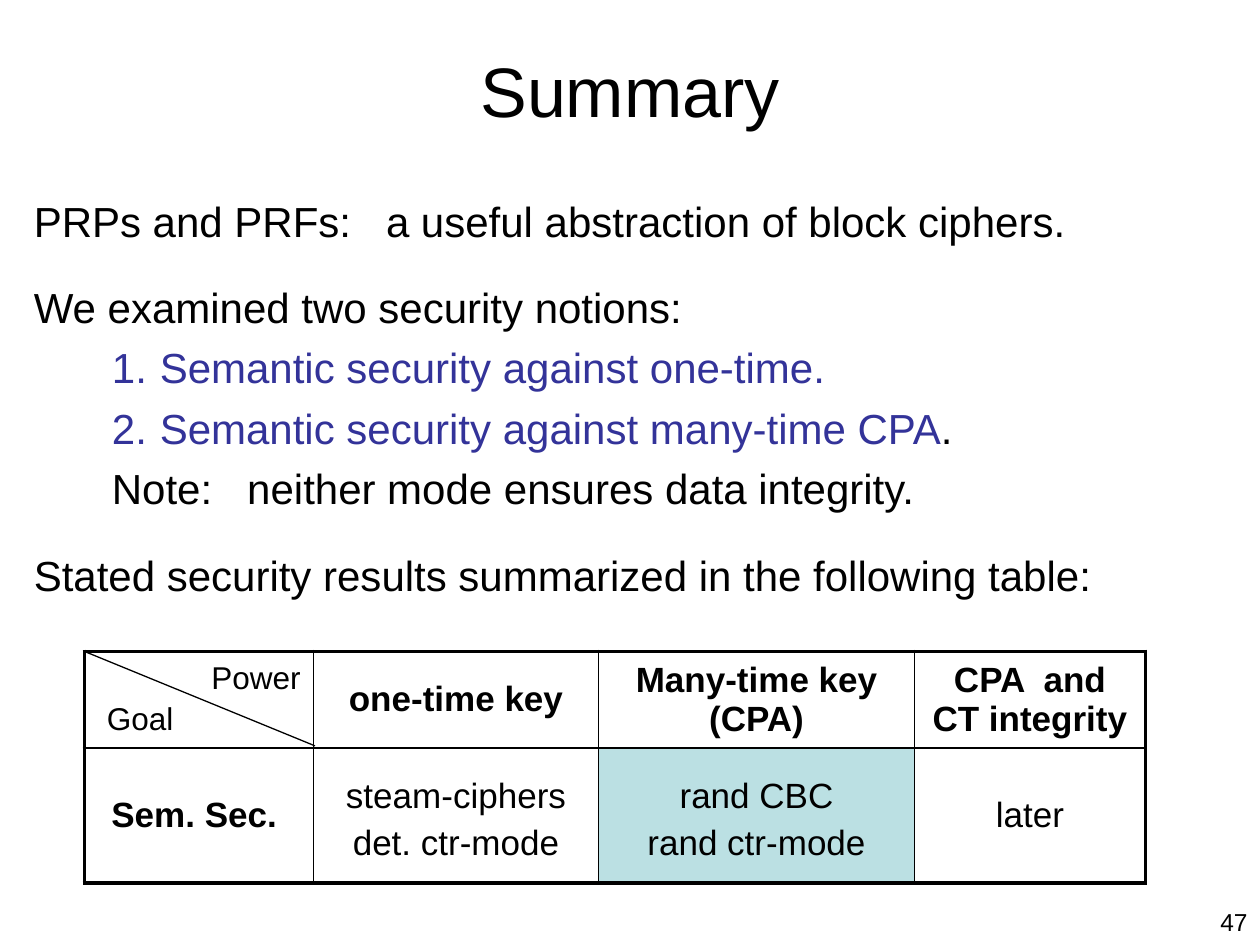
from dataclasses import dataclass

from lxml.etree import SubElement
from pptx import Presentation
from pptx.dml.color import RGBColor
from pptx.enum.shapes import MSO_CONNECTOR
from pptx.enum.text import MSO_ANCHOR as Anchor, PP_ALIGN as Align
from pptx.oxml.ns import qn
from pptx.util import Inches, Pt

BLACK, BLUE, TEAL, WHITE = "000000", "333399", "BBE0E3", "FFFFFF"
THIN, THICK = 1, 2.25


@dataclass
class Label:
    text: str
    left: float
    top: float
    width: float
    height: float
    size: float
    align: Align = Align.LEFT
    anchor: Anchor = Anchor.TOP
    wrap: bool = True


@dataclass
class Line:
    text: str
    before: float = 5.8
    color: str = BLACK
    indented: bool = False
    numbered: bool = False
    ending: str = ""


@dataclass
class Entry:
    text: str = ""
    bold: bool = True
    spacing: float = 1.0
    fill: str = WHITE


LABELS = [
    Label("47", 7.67, 7.15, 2.33, 0.44, 14, Align.RIGHT),
    Label("Summary", 0.5, 0.25, 9, 0.92, 40, Align.CENTER, Anchor.MIDDLE),
]
CORNER_LABELS = [
    Label("Goal", 0.75, 5.5, 0.73, 0.4, 18, wrap=False),
    Label("Power", 1.58, 5.17, 0.91, 0.4, 18, wrap=False),
]
LINES = [
    Line("PRPs and PRFs:   a useful abstraction of block ciphers."),
    Line("We examined two security notions:", before=20.4),
    Line("Semantic security against one-time.", color=BLUE, indented=True, numbered=True),
    Line("Semantic security against many-time CPA", color=BLUE, indented=True,
         numbered=True, ending="."),
    Line("Note:   neither mode ensures data integrity.", indented=True),
    Line("Stated security results summarized in the following table:", before=20.4),
]
COLUMNS = [1.82, 2.26, 2.51, 1.83]
ROWS = [0.56, 1.07]
ENTRIES = [
    [Entry(), Entry("one-time key"), Entry("Many-time key (CPA)"),
     Entry("CPA  and\nCT integrity")],
    [Entry("Sem. Sec. "), Entry("steam-ciphers\ndet. ctr-mode", False, 1.2),
     Entry("rand CBC\nrand ctr-mode", False, 1.2, TEAL), Entry("later", False)],
]


def rgb(color: str) -> RGBColor:
    return RGBColor.from_string(color)


def set_font(font, size: float, color: str = BLACK, bold: bool = False) -> None:
    font.name = "Arial"
    font.size = Pt(size)
    font.bold = bold
    font.color.rgb = rgb(color)


def add_label(page, label: Label) -> None:
    box = page.shapes.add_textbox(Inches(label.left), Inches(label.top),
                                  Inches(label.width), Inches(label.height))
    frame = box.text_frame
    frame.word_wrap = label.wrap
    frame.vertical_anchor = label.anchor
    para = frame.paragraphs[0]
    para.text = label.text
    para.alignment = label.align
    set_font(para.font, label.size)


def add_body(page, lines: list[Line]) -> None:
    box = page.shapes.add_textbox(Inches(0.17), Inches(1.5), Inches(9.5), Inches(5.58))
    frame = box.text_frame
    frame.word_wrap = True
    for index, line in enumerate(lines):
        para = frame.add_paragraph() if index else frame.paragraphs[0]
        para.space_before = Pt(line.before)
        set_font(para.font, 24)
        span = para.add_run()
        span.text = line.text
        if line.color != BLACK:
            span.font.color.rgb = rgb(line.color)
        if line.ending:
            para.add_run().text = line.ending
        if line.indented:
            para.level = 1
            properties = para._p.get_or_add_pPr()
            properties.set("marL", str(Inches(1)))
            properties.set("indent", str(Inches(-0.38)))
            if line.numbered:
                number = properties.makeelement(qn("a:buAutoNum"), {"type": "arabicPeriod"})
                properties.find(qn("a:defRPr")).addprevious(number)


def set_borders(cell, widths: dict[str, float]) -> None:
    properties = cell._tc.get_or_add_tcPr()
    for side, width in widths.items():
        border = SubElement(properties, qn(f"a:ln{side}"), w=str(Pt(width)))
        fill = SubElement(border, qn("a:solidFill"))
        SubElement(fill, qn("a:srgbClr"), val=BLACK)


def fill_cell(cell, entry: Entry) -> None:
    cell.vertical_anchor = Anchor.MIDDLE
    cell.fill.solid()
    cell.fill.fore_color.rgb = rgb(entry.fill)
    para = cell.text_frame.paragraphs[0]
    para.text = entry.text
    para.alignment = Align.CENTER
    para.space_before = Pt(4)
    para.line_spacing = entry.spacing
    set_font(para.font, 20, bold=entry.bold)


def add_results(page, entries: list[list[Entry]]) -> None:
    table = page.shapes.add_table(len(ROWS), len(COLUMNS), Inches(0.67), Inches(5.17),
                                  Inches(sum(COLUMNS)), Inches(sum(ROWS))).table
    table.first_row = table.horz_banding = False
    for column, width in zip(table.columns, COLUMNS):
        column.width = Inches(width)
    for row, height in zip(table.rows, ROWS):
        row.height = Inches(height)
    for r, row_entries in enumerate(entries):
        for c, entry in enumerate(row_entries):
            outer = {"L": c == 0, "R": c == len(COLUMNS) - 1,
                     "T": r == 0, "B": r == len(ROWS) - 1}
            cell = table.cell(r, c)
            set_borders(cell, {side: THICK if edge else THIN for side, edge in outer.items()})
            fill_cell(cell, entry)


def add_diagonal(page) -> None:
    diagonal = page.shapes.add_connector(MSO_CONNECTOR.STRAIGHT, Inches(0.67), Inches(5.17),
                                         Inches(2.5), Inches(5.92))
    diagonal.line.color.rgb = rgb(BLACK)
    diagonal.line.width = Pt(0.75)
    SubElement(diagonal._element.spPr, qn("a:effectLst"))


def main() -> None:
    deck = Presentation()
    deck.slide_width, deck.slide_height = Inches(10), Inches(7.5)
    page = deck.slides.add_slide(deck.slide_layouts[6])
    for label in LABELS:
        add_label(page, label)
    add_body(page, LINES)
    add_results(page, ENTRIES)
    add_diagonal(page)
    for label in CORNER_LABELS:
        add_label(page, label)
    deck.save("out.pptx")


if __name__ == "__main__":
    main()
